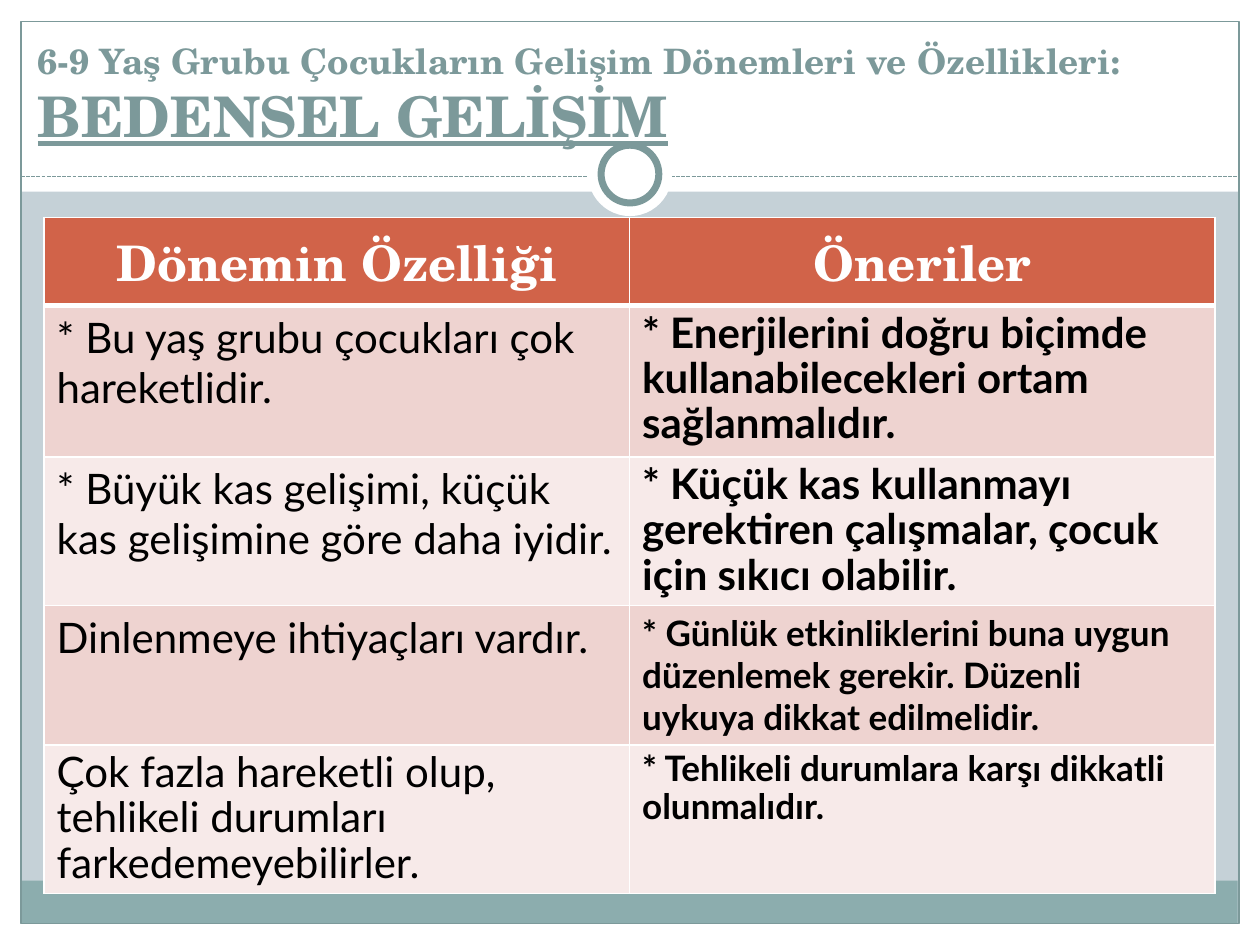
from dataclasses import dataclass
from lxml import etree
from pptx import Presentation
from pptx.dml import color
from pptx.enum import dml, shapes, text
from pptx.oxml import ns
from pptx.util import Pt

TEAL, WHITE, RED = "7C999A", "FFFFFF", "D16349"
ROSE, PALE = "EED3D0", "F7EAE9"
SERIF, SANS = "TeX Gyre Schola", "Lato"
RECT, OVAL = shapes.MSO_SHAPE.RECTANGLE, shapes.MSO_SHAPE.OVAL


@dataclass
class Part:
    kind: int
    box: tuple
    fill: str | None = WHITE
    line: float = 0


@dataclass
class Entry:
    words: str
    size: int = 24
    bold: bool = False
    space: float = 1.0


def paint(form, tint: str) -> None:
    """Give a fill, or the fill of a line, one solid colour."""
    form.solid()
    form.fore_color.rgb = color.RGBColor.from_string(tint)


def style(run, tint: str, **form) -> None:
    for key, value in form.items():
        setattr(run.font, key, value)
    paint(run.font.fill, tint)


def draw(slide, part: Part) -> None:
    shape = slide.shapes.add_shape(part.kind, *map(Pt, part.box))
    shape.shadow.inherit = False
    if part.fill:
        paint(shape.fill, part.fill)
    else:
        shape.fill.background()
    if part.line:
        paint(shape.line.fill, TEAL)
        shape.line.width = Pt(part.line)
    else:
        shape.line.fill.background()


def edge(cell, top: float, base: float) -> None:
    """Put white borders on a cell, in points."""
    props = cell._tc.get_or_add_tcPr()
    sides = {"lnL": 1, "lnR": 1, "lnT": top, "lnB": base}
    for spot, (tag, width) in enumerate(sides.items()):
        line = etree.Element(ns.qn(f"a:{tag}"), w=str(Pt(width)))
        fill = etree.SubElement(line, ns.qn("a:solidFill"))
        etree.SubElement(fill, ns.qn("a:srgbClr"), val=WHITE)
        props.insert(spot, line)


def fill_cell(cell, entry: Entry, row: int) -> None:
    head = row == 0
    paint(cell.fill, RED if head else (PALE, ROSE)[row % 2])
    edge(cell, 3 if row == 1 else 1, 3 if head else 1)
    para = cell.text_frame.paragraphs[0]
    para.alignment = text.PP_ALIGN.CENTER if head else text.PP_ALIGN.LEFT
    para.line_spacing = entry.space
    run = para.add_run()
    run.text = entry.words
    style(run, WHITE if head else "000000", name=SERIF if head else SANS,
          size=Pt(entry.size), bold=entry.bold)


PARTS = [
    Part(RECT, (0, 527.75, 720, 12.25)),
    Part(RECT, (0, 0, 720, 109.5)),
    Part(RECT, (0, 0, 12, 540)),
    Part(RECT, (708, 0, 12, 540)),
    Part(RECT, (11.75, 503.25, 695.5, 24.5), "8CADAE"),
    Part(RECT, (12, 12.25, 696, 515.5), None, 0.75),
]
RINGS = [
    Part(OVAL, (336, 75.5, 48, 48)),
    Part(OVAL, (343.5, 83, 33, 33), WHITE, 4),
]
HEIGHTS = [49.5, 86.4, 85, 79.4, 85]
ROWS = [
    (Entry("Dönemin Özelliği", 28, True), Entry("Öneriler", 28, True)),
    (Entry("* Bu yaş grubu çocukları çok hareketlidir."),
     Entry("* Enerjilerini doğru biçimde kullanabilecekleri ortam "
           "sağlanmalıdır.", 24, True, 0.9)),
    (Entry("* Büyük kas gelişimi, küçük kas gelişimine göre daha iyidir."),
     Entry("* Küçük kas kullanmayı gerektiren çalışmalar, çocuk için "
           "sıkıcı olabilir.", 24, True, 0.9)),
    (Entry("Dinlenmeye ihtiyaçları vardır."),
     Entry("* Günlük etkinliklerini buna uygun düzenlemek gerekir. "
           "Düzenli uykuya dikkat edilmelidir.", 20, True)),
    (Entry("Çok fazla hareketli olup, tehlikeli durumları "
           "farkedemeyebilirler.", space=0.9),
     Entry("* Tehlikeli durumlara karşı dikkatli olunmalıdır.",
           20, True, 0.9)),
]


def add_title(slide) -> None:
    title = slide.shapes.title
    # Bring the title in front of the white band
    title.element.getparent().append(title.element)
    place = dict(left=14.4, top=3.6, width=705.6, height=85)
    for key, value in place.items():
        setattr(title, key, Pt(value))
    frame = title.text_frame
    frame.word_wrap = True
    frame.auto_size = text.MSO_AUTO_SIZE.NONE
    frame.vertical_anchor = text.MSO_ANCHOR.BOTTOM
    para = frame.paragraphs[0]
    para.alignment = text.PP_ALIGN.LEFT
    look = dict(name=SERIF, bold=True)
    run = para.add_run()
    run.text = "6-9 Yaş Grubu Çocukların Gelişim Dönemleri ve Özellikleri:"
    style(run, TEAL, size=Pt(20), **look)
    para.add_line_break()
    # The break takes the size of the first line
    gap = para._p.find(ns.qn("a:br"))
    etree.SubElement(gap, ns.qn("a:rPr"), sz="2000")
    run = para.add_run()
    run.text = "BEDENSEL GELİŞİM"
    style(run, TEAL, size=Pt(32), underline=True, **look)


def add_rule(slide) -> None:
    rule = slide.shapes.add_connector(
        shapes.MSO_CONNECTOR.STRAIGHT, Pt(12), Pt(100.8), Pt(708), Pt(100.8))
    paint(rule.line.fill, TEAL)
    rule.line.width = Pt(0.75)
    rule.line.dash_style = dml.MSO_LINE.SQUARE_DOT
    etree.SubElement(rule.element.spPr, ns.qn("a:effectLst"))


def add_grid(slide) -> None:
    box = map(Pt, (25.2, 124.2, 669.2, sum(HEIGHTS)))
    grid = slide.shapes.add_table(len(ROWS), 2, *box).table
    for row, (height, pair) in enumerate(zip(HEIGHTS, ROWS)):
        grid.rows[row].height = Pt(height)
        for col, entry in enumerate(pair):
            fill_cell(grid.cell(row, col), entry, row)


def main() -> None:
    deck = Presentation()
    deck.slide_width, deck.slide_height = Pt(720), Pt(540)
    slide = deck.slides.add_slide(deck.slide_layouts[5])
    paint(slide.background.fill, "C5D1D7")
    # Frame, dashed rule and ring
    for part in PARTS:
        draw(slide, part)
    add_rule(slide)
    for part in RINGS:
        draw(slide, part)
    # Title and table
    add_title(slide)
    add_grid(slide)
    deck.save("out.pptx")


if __name__ == "__main__":
    main()
